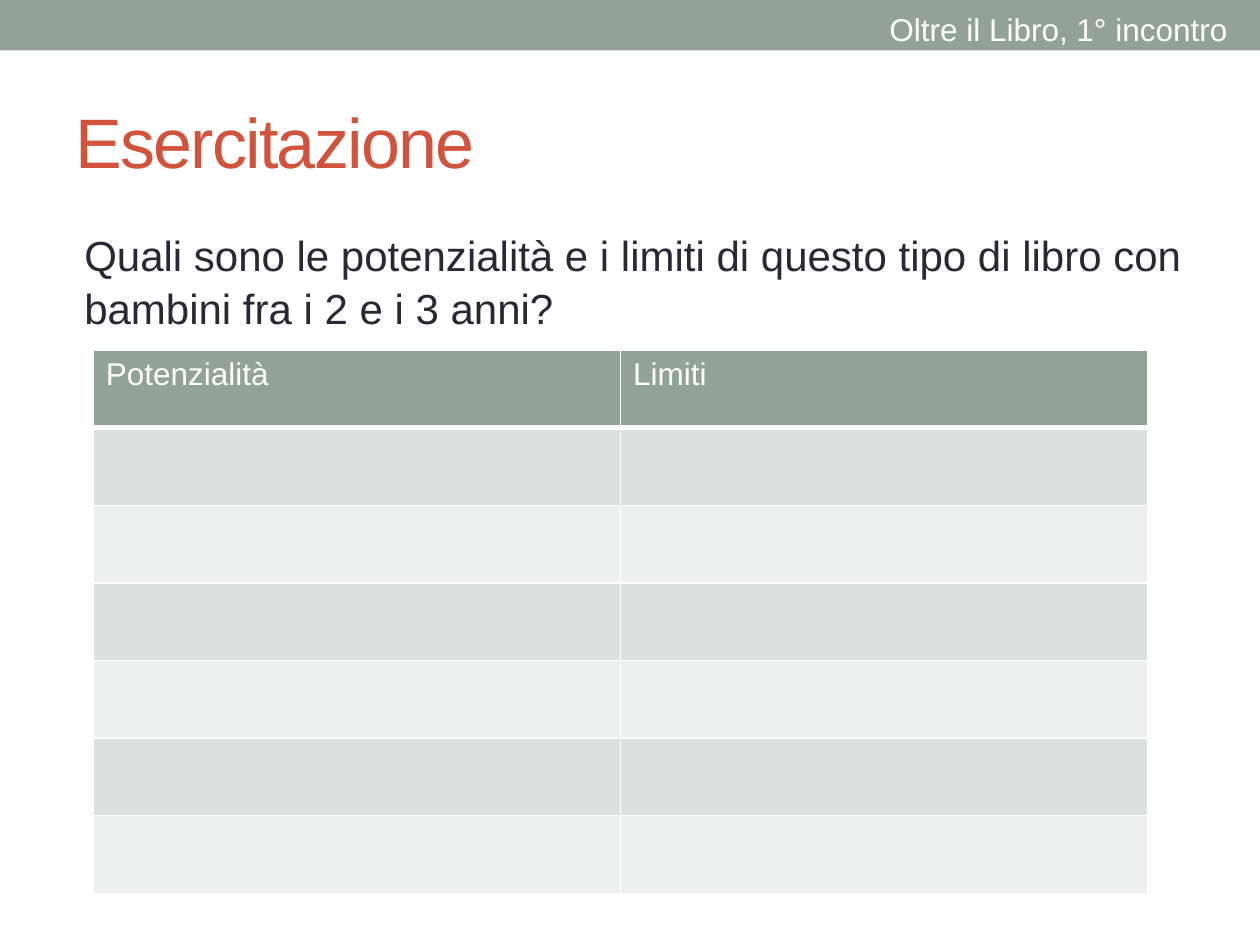
from lxml.etree import SubElement
from pptx import Presentation
from pptx.dml.color import RGBColor
from pptx.enum.shapes import MSO_SHAPE
from pptx.enum.text import MSO_ANCHOR
from pptx.oxml.ns import qn
from pptx.util import Cm, Pt

COLOURS = {
    "sage": "93A299",
    "brick": "D2533C",
    "ink": "292934",
    "white": "FFFFFF",
    "band_dark": "DCE0DE",
    "band_light": "EEF0EF",
}
BORDERS = {"a:lnL": 1, "a:lnR": 1, "a:lnT": 1, "a:lnB": 1}
HEADER_BORDERS = {**BORDERS, "a:lnB": 3}


def colour(name):
    return RGBColor.from_string(COLOURS[name])


def write(paragraph, text, size, colour_name):
    run = paragraph.add_run()
    run.text = text
    for name, value in {"name": "Arial", "size": Pt(size)}.items():
        setattr(run.font, name, value)
    run.font.color.rgb = colour(colour_name)
    return run


def add_text(slide, box, text, size, colour_name, **frame_format):
    frame = slide.shapes.add_textbox(*map(Cm, box)).text_frame
    for name, value in {"word_wrap": True, **frame_format}.items():
        setattr(frame, name, value)
    paragraph = frame.paragraphs[0]
    return paragraph, write(paragraph, text, size, colour_name)


def add_header(slide, left, top, width, height):
    band = slide.shapes.add_shape(
        MSO_SHAPE.RECTANGLE, *map(Cm, (left, top, width, height)))
    band.shadow.inherit = False
    band.fill.solid()
    band.fill.fore_color.rgb = colour("sage")
    band.line.fill.background()
    label_box = (left + width - 7.72, top + 0.08, 7.39, height)
    add_text(slide, label_box, "Oltre il Libro, 1° incontro", 18, "white",
             word_wrap=False)


def add_title(slide, *box):
    run = add_text(slide, box, "Esercitazione", 40, "brick",
                   vertical_anchor=MSO_ANCHOR.MIDDLE)[1]
    run.font._element.set("spc", "-100")


def add_question(slide, *box):
    question = ("Quali sono le potenzialità e i limiti di questo tipo di libro "
                "con bambini fra i 2 e i 3 anni?")
    paragraph = add_text(slide, box, question, 24, "ink")[0]
    for name, value in {"space_before": Pt(4.8), "line_spacing": 1.05}.items():
        setattr(paragraph, name, value)
    properties = paragraph._p.get_or_add_pPr()
    properties.set("marL", str(Cm(0.18)))
    properties.set("indent", "0")


def set_borders(cell, borders):
    """Draw white cell edges; the edges must come before the fill in the XML."""
    properties = cell._tc.get_or_add_tcPr()
    for index, (tag, width) in enumerate(borders.items()):
        line = SubElement(properties, qn(tag), w=str(Pt(width)))
        fill = SubElement(line, qn("a:solidFill"))
        SubElement(fill, qn("a:srgbClr"), val=COLOURS["white"])
        properties.insert(index, line)


def add_answer_table(slide, left, top, width, height):
    headings = ("Potenzialità", "Limiti")
    row_count = 7
    table = slide.shapes.add_table(
        row_count, len(headings), *map(Cm, (left, top, width, height))).table
    for row_index, row in enumerate(table.rows):
        if row_index == 0:
            fill = "sage"
        else:
            fill = "band_dark" if row_index % 2 else "band_light"
        for cell, heading in zip(row.cells, headings):
            cell.fill.solid()
            cell.fill.fore_color.rgb = colour(fill)
            set_borders(cell, BORDERS if row_index else HEADER_BORDERS)
            if row_index == 0:
                write(cell.text_frame.paragraphs[0], heading, 18, "white")


def main():
    presentation = Presentation()
    presentation.slide_width = Cm(25.4)
    presentation.slide_height = Cm(19.05)
    slide = presentation.slides.add_slide(presentation.slide_layouts[6])
    add_header(slide, 0, 0, 25.4, 1.02)
    add_title(slide, 1.27, 1.47, 22.86, 2.74)
    add_question(slide, 1.27, 4.45, 22.86, 13.54)
    add_answer_table(slide, 1.88, 7.06, 21.26, 10.95)
    presentation.save("out.pptx")


if __name__ == "__main__":
    main()
